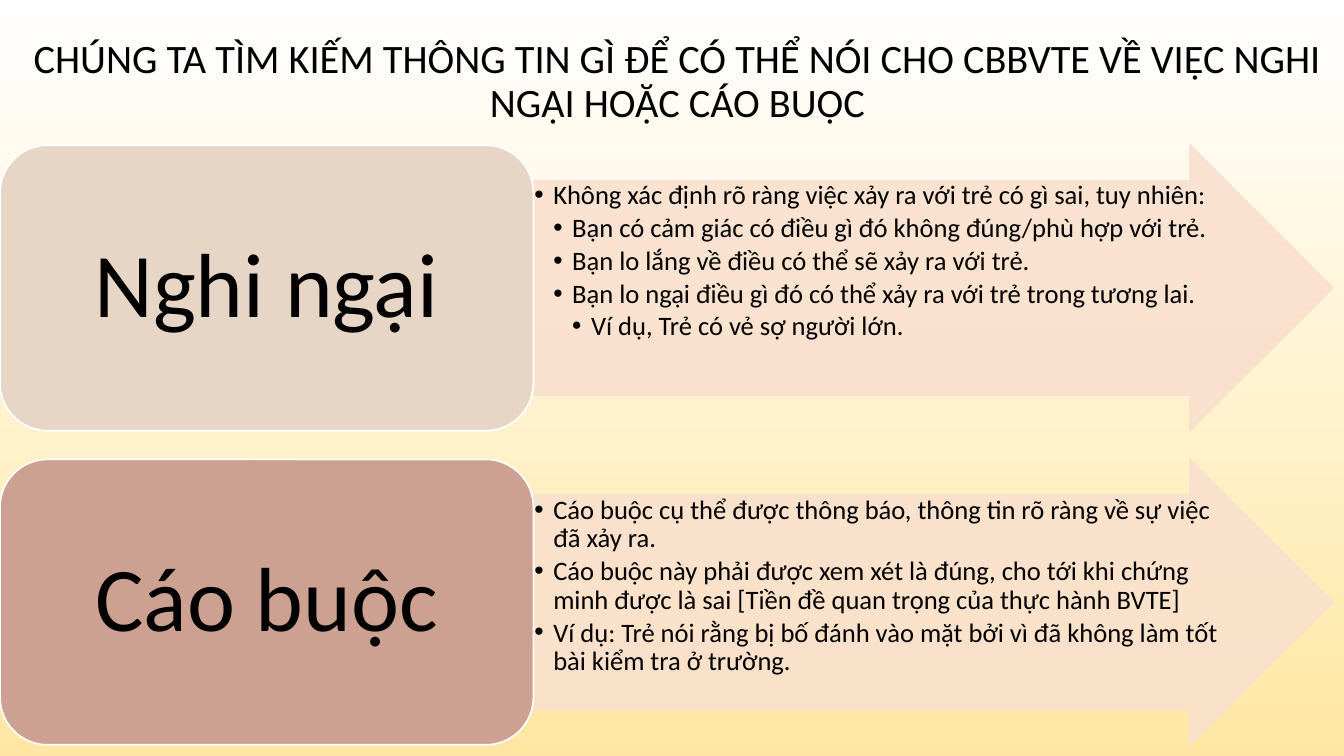
import pptx
import pptx.dml.color
import pptx.enum.dml
import pptx.enum.shapes
import pptx.enum.text
import pptx.util
from lxml import etree

Pt = pptx.util.Pt
SHAPE = pptx.enum.shapes.MSO_SHAPE
ALIGN = pptx.enum.text.PP_ALIGN
ANCHOR = pptx.enum.text.MSO_ANCHOR

TITLE = "CHÚNG TA TÌM KIẾM THÔNG TIN GÌ ĐỂ CÓ THỂ NÓI CHO CBBVTE VỀ VIỆC NGHI NGẠI HOẶC CÁO BUỘC"
SECTIONS = [
    ("Nghi ngại", "E7D6C5", [
        (1, "Không xác định rõ ràng việc xảy ra với trẻ có gì sai, tuy nhiên:"),
        (2, "Bạn có cảm giác có điều gì đó không đúng/phù hợp với trẻ."),
        (2, "Bạn lo lắng về điều có thể sẽ xảy ra với trẻ."),
        (2, "Bạn lo ngại điều gì đó có thể xảy ra với trẻ trong tương lai."),
        (3, "Ví dụ, Trẻ có vẻ sợ người lớn."),
    ]),
    ("Cáo buộc", "CCA192", [
        (1, "Cáo buộc cụ thể được thông báo, thông tin rõ ràng về sự việc đã xảy ra."),
        (1, "Cáo buộc này phải được xem xét là đúng, cho tới khi chứng minh được là sai "
            "[Tiền đề quan trọng của thực hành BVTE]"),
        (1, "Ví dụ: Trẻ nói rằng bị bố đánh vào mặt bởi vì đã không làm tốt bài kiểm tra ở trường."),
    ]),
]
FONT = "Calibri"
BLACK = "000000"
ARROW_COLOR = "F9E0CD"
FIRST_TOP, ROW_STEP, ROW_HEIGHT = 103.75, 224.4, 203.9
LABEL_WIDTH, ARROW_WIDTH = 381, 571
BULLET_INDENT = 13.5


def color(value):
    return pptx.dml.color.RGBColor.from_string(value)


def set_frame(shape, anchor, side, vertical):
    frame = shape.text_frame
    frame.word_wrap = True
    frame.vertical_anchor = anchor
    frame.margin_left = frame.margin_right = Pt(side)
    frame.margin_top = frame.margin_bottom = Pt(vertical)
    return frame


def write(para, text, size, align):
    para.alignment = align
    para.line_spacing = 0.9
    span = para.add_run()
    span.text = text
    span.font.name = FONT
    span.font.size = Pt(size)
    span.font.color.rgb = color(BLACK)


def add_panel(page, kind, left, top, width, fill, line):
    shape = page.shapes.add_shape(kind, Pt(left), Pt(top), Pt(width), Pt(ROW_HEIGHT))
    shape.shadow.inherit = False
    shape.fill.solid()
    shape.fill.fore_color.rgb = color(fill)
    shape.line.color.rgb = color(line)
    shape.line.width = Pt(1.25)
    return shape


def set_opacity(shape, percent):
    tag = pptx.oxml.ns.qn
    for solid in shape.element.spPr.iter(tag("a:solidFill")):
        etree.SubElement(solid[0], tag("a:alpha")).set("val", str(percent * 1000))


def add_bullet(para, level):
    properties = para._p.get_or_add_pPr()
    properties.set("marL", str(Pt(BULLET_INDENT * level)))
    properties.set("indent", str(-Pt(BULLET_INDENT)))
    tag = pptx.oxml.ns.qn
    etree.SubElement(properties, tag("a:buFont")).set("typeface", "Arial")
    etree.SubElement(properties, tag("a:buChar")).set("char", "•")


def add_section(page, top, label, fill, points):
    arrow = add_panel(page, SHAPE.RIGHT_ARROW, LABEL_WIDTH, top, ARROW_WIDTH, ARROW_COLOR, ARROW_COLOR)
    arrow.adjustments[0] = 0.75
    arrow.adjustments[1] = 0.5
    set_opacity(arrow, 90)
    frame = set_frame(arrow, ANCHOR.TOP, 0.75, 0.75)
    for index, (level, text) in enumerate(points):
        para = frame.add_paragraph() if index else frame.paragraphs[0]
        para.level = level
        add_bullet(para, level)
        para.space_after = Pt(2.85)
        write(para, text, 19, ALIGN.LEFT)

    panel = add_panel(page, SHAPE.ROUNDED_RECTANGLE, 0, top, LABEL_WIDTH, fill, "FFFFFF")
    frame = set_frame(panel, ANCHOR.MIDDLE, 19.5, 10)
    write(frame.paragraphs[0], label, 65, ALIGN.CENTER)


def main():
    deck = pptx.Presentation()
    deck.slide_width, deck.slide_height = Pt(960), Pt(540)
    page = deck.slides.add_slide(deck.slide_layouts[6])

    backdrop = page.background.fill
    backdrop.gradient()
    backdrop.gradient_angle = 270
    for stop, position, value in zip(backdrop.gradient_stops, (0, 1), ("FFFFFF", "FFE7A3")):
        stop.position = position
        stop.color.rgb = color(value)

    title = page.shapes.add_textbox(Pt(8), Pt(28.8), Pt(952), Pt(60.5))
    frame = set_frame(title, ANCHOR.MIDDLE, 7.2, 3.6)
    write(frame.paragraphs[0], TITLE, 28.8, ALIGN.CENTER)

    for row, section in enumerate(SECTIONS):
        add_section(page, FIRST_TOP + row * ROW_STEP, *section)

    deck.save("out.pptx")


if __name__ == "__main__":
    main()
